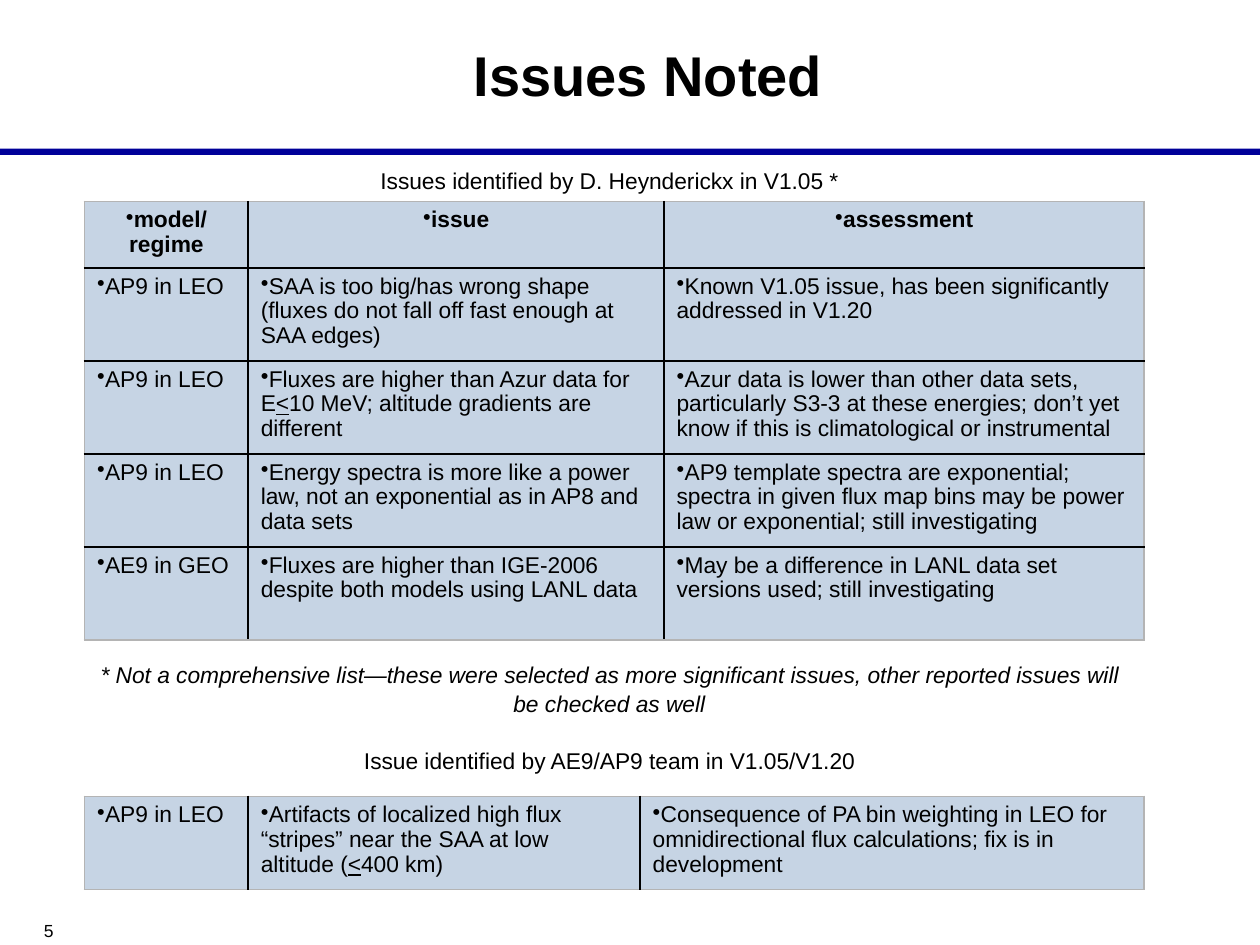
from dataclasses import dataclass

from lxml import etree
from pptx import Presentation
from pptx import util as u
from pptx.dml.color import RGBColor
from pptx.enum import shapes, text
from pptx.oxml.ns import qn


@dataclass(frozen=True)
class Theme:
    font: str = "Arial"
    ink: str = "000000"
    rule: str = "000099"
    cell: str = "C6D4E4"
    frame: str = "B4B4B4"
    title: int = 32
    body: int = 13
    small: int = 10


class SlideBuilder:
    def __init__(self, page, theme):
        self.page = page
        self.theme = theme

    def color(self, name):
        return RGBColor.from_string(getattr(self.theme, name))

    def fill_para(self, para, spans, align="LEFT", **formats):
        """Fill a paragraph; spans alternate between plain and underlined."""
        para.alignment = getattr(text.PP_ALIGN, align)
        values = {"name": self.theme.font, "size": u.Pt(self.theme.body), **formats}
        for index, words in enumerate(spans):
            span = para.add_run()
            span.text = words
            for key, value in values.items():
                setattr(span.font, key, value)
            span.font.color.rgb = self.color("ink")
            if index % 2:
                span.font.underline = True

    def label(self, words, left, top, width, height, align="CENTER",
              anchor="TOP", spacing=1.0, **formats):
        box = self.page.shapes.add_textbox(*map(u.Inches, (left, top, width, height)))
        frame = box.text_frame
        frame.word_wrap = True
        frame.vertical_anchor = getattr(text.MSO_ANCHOR, anchor)
        para = frame.paragraphs[0]
        para.line_spacing = spacing
        self.fill_para(para, [words], align, **formats)

    def bar(self, left, top, width, height):
        bar = self.page.shapes.add_shape(
            shapes.MSO_SHAPE.RECTANGLE, *map(u.Inches, (left, top, width, height)))
        bar.shadow.inherit = False
        bar.fill.solid()
        bar.fill.fore_color.rgb = self.color("rule")
        bar.line.fill.background()

    def borders(self, cell, outer):
        """Draw grey lines on the outer sides and black lines inside."""
        properties = cell._tc.get_or_add_tcPr()
        for position, (side, is_outer) in enumerate(outer.items()):
            line = etree.Element(qn("a:" + side), w=str(u.Pt(1)))
            fill = etree.SubElement(line, qn("a:solidFill"))
            shade = self.theme.frame if is_outer else self.theme.ink
            etree.SubElement(fill, qn("a:srgbClr"), val=shade)
            properties.insert(position, line)

    def bullet(self, para):
        properties = para._p.get_or_add_pPr()
        properties.set("marL", "0")
        properties.set("indent", "0")
        etree.SubElement(properties, qn("a:buChar"), char="•")

    def table(self, rows, left, top, widths, heights, header=False):
        size = map(u.Inches, (left, top, sum(widths), sum(heights)))
        table = self.page.shapes.add_table(len(rows), len(widths), *size).table
        table.first_row = header
        table.horz_banding = False
        for column, width in zip(table.columns, widths):
            column.width = u.Inches(width)
        for r, (row, height) in enumerate(zip(rows, heights)):
            table.rows[r].height = u.Inches(height)
            for c, spans in enumerate(row):
                cell = table.cell(r, c)
                cell.fill.solid()
                cell.fill.fore_color.rgb = self.color("cell")
                self.borders(cell, {"lnL": c == 0, "lnR": c == len(row) - 1,
                                    "lnT": r == 0, "lnB": r == len(rows) - 1})
                para = cell.text_frame.paragraphs[0]
                para.line_spacing = 0.98
                self.bullet(para)
                is_head = header and r == 0
                self.fill_para(para, spans, "CENTER" if is_head else "LEFT", bold=is_head)


ISSUES = [
    [["model/ regime"], ["issue"], ["assessment"]],
    [["AP9 in LEO"],
     ["SAA is too big/has wrong shape (fluxes do not fall off fast enough at SAA edges)"],
     ["Known V1.05 issue, has been significantly addressed in V1.20"]],
    [["AP9 in LEO"],
     ["Fluxes are higher than Azur data for E", "<",
      "10 MeV; altitude gradients are different"],
     ["Azur data is lower than other data sets, particularly S3-3 at these energies; "
      "don’t yet know if this is climatological or instrumental"]],
    [["AP9 in LEO"],
     ["Energy spectra is more like a power law, not an exponential as in AP8 and data sets"],
     ["AP9 template spectra are exponential; spectra in given flux map bins may be "
      "power law or exponential; still investigating"]],
    [["AE9 in GEO"],
     ["Fluxes are higher than IGE-2006 despite both models using LANL data"],
     ["May be a difference in LANL data set versions used; still investigating"]],
]
TEAM_ISSUES = [
    [["AP9 in LEO"],
     ["Artifacts of localized high flux “stripes” near the SAA at low altitude (",
      "<", "400 km)"],
     ["Consequence of PA bin weighting in LEO for omnidirectional flux calculations; "
      "fix is in development"]],
]


def main():
    deck = Presentation()
    deck.slide_width, deck.slide_height = u.Inches(10), u.Inches(7.5)
    theme = Theme()
    slide = SlideBuilder(deck.slides.add_slide(deck.slide_layouts[6]), theme)
    left, width = 0.67, 8.33

    # Heading, rule and page number
    slide.label("Issues Noted", 1.48, 0.25, 7.33, 0.67, anchor="MIDDLE",
                size=u.Pt(theme.title), bold=True)
    slide.bar(0, 1.18, 10, 0.05)
    slide.label("5", 0.25, 7.25, 1.08, 0.27, align="LEFT", size=u.Pt(theme.small))

    # Reported issues
    slide.label("Issues identified by D. Heynderickx in V1.05 *", left, 1.27, width, 0.32)
    slide.table(ISSUES, left, 1.6, [1.3, 3.3, 3.81],
                [0.51, 0.71, 0.71, 0.71, 0.74], header=True)
    slide.label("* Not a comprehensive list—these were selected as more significant "
                "issues, other reported issues will be checked as well",
                left, 5.18, width, 0.57, spacing=1.07, italic=True)

    # Issue found by the team
    slide.label("Issue identified by AE9/AP9 team in V1.05/V1.20", left, 5.88, width, 0.32)
    slide.table(TEAM_ISSUES, left, 6.32, [1.3, 3.11, 4], [0.71])

    deck.save("out.pptx")


if __name__ == "__main__":
    main()
